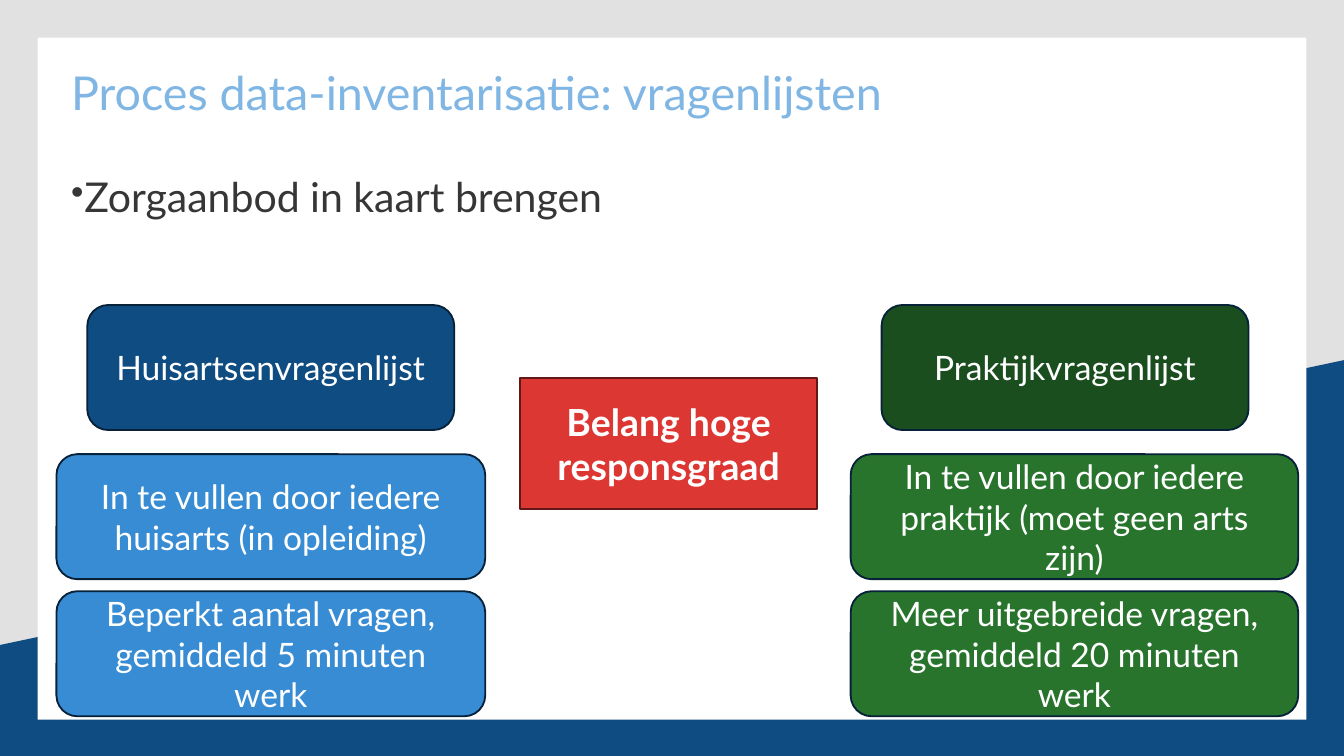
from lxml import etree
from pptx import Presentation
from pptx.dml.color import RGBColor
from pptx.enum.shapes import MSO_SHAPE
from pptx.enum.text import MSO_ANCHOR, PP_ALIGN
from pptx.oxml.ns import qn
from pptx.util import Inches, Pt

RECT, ROUND = MSO_SHAPE.RECTANGLE, MSO_SHAPE.ROUNDED_RECTANGLE
MIDDLE, CENTER = MSO_ANCHOR.MIDDLE, PP_ALIGN.CENTER

TITLE = "Proces data-inventarisatie: vragenlijsten"
POINT = "Zorgaanbod in kaart brengen"
CALL = "Belang hoge responsgraad"
LISTS = [
    {"head": "Huisartsenvragenlijst", "tone": ("navy", "blue"),
     "left": 0.42, "inset": 0.23, "width": 3.19,
     "facts": ["In te vullen door iedere huisarts (in opleiding)",
               "Beperkt aantal vragen, gemiddeld 5 minuten werk"]},
    {"head": "Praktijkvragenlijst", "tone": ("forest", "green"),
     "left": 6.33, "inset": 0.23, "width": 3.33,
     "facts": ["In te vullen door iedere praktijk (moet geen arts zijn)",
               "Meer uitgebreide vragen, gemiddeld 20 minuten werk"]},
]

THEME = {
    "font": "Lato",
    "size": {"title": 25, "point": 22, "call": 20, "card": 18},
    "color": {"back": "E1E1E1", "white": "FFFFFF", "ink": "373636",
              "sky": "80B6E4", "navy": "0F4C81", "blue": "378CD4",
              "forest": "1A4E1E", "green": "28742D", "edge": "072139",
              "red": "DD3734", "wine": "611817"},
}

WIDE, HIGH = 10, 5.625
EDGE = 0.28
HEAD_W, CARD_H = 2.73, 0.93
HEAD_Y, FACT_Y, STEP = 2.27, 3.38, 1.02


def rgb(name):
    return RGBColor.from_string(THEME["color"][name])


def style(para, size, color, bold=False):
    for run in para.runs:
        font = run.font
        font.name, font.size = THEME["font"], Pt(THEME["size"][size])
        font.bold, font.color.rgb = bold, rgb(color)


def paint(shape, fill, line=None):
    shape.shadow.inherit = False
    shape.fill.solid()
    shape.fill.fore_color.rgb = rgb(fill)
    if line:
        shape.line.color.rgb = rgb(line)
        shape.line.width = Pt(1)
    else:
        shape.line.fill.background()


def block(slide, kind, box, fill, line=None, text="", size="card", bold=False):
    shape = slide.shapes.add_shape(kind, *map(Inches, box))
    paint(shape, fill, line)
    if text:
        frame = shape.text_frame
        frame.text, frame.word_wrap = text, True
        frame.vertical_anchor = MIDDLE
        para = frame.paragraphs[0]
        para.alignment = CENTER
        style(para, size, "white", bold)


def label(slide, box, text, size, color, bullet=False):
    frame = slide.shapes.add_textbox(*map(Inches, box)).text_frame
    frame.text, frame.word_wrap = text, True
    frame.margin_left = frame.margin_right = 0
    frame.margin_top = frame.margin_bottom = 0
    para = frame.paragraphs[0]
    para.line_spacing = 0.9
    if bullet:
        props = para._p.get_or_add_pPr()
        etree.SubElement(props, qn("a:buSzPct")).set("val", "90000")
        etree.SubElement(props, qn("a:buChar")).set("char", "•")
    style(para, size, color)


def backdrop(slide):
    fill = slide.background.fill
    fill.solid()
    fill.fore_color.rgb = rgb("back")
    pen = slide.shapes.build_freeform(Inches(WIDE), Inches(2.68), scale=1.0)
    rest = [(WIDE, HIGH), (0, HIGH), (0, 4.8)]
    pen.add_line_segments([(Inches(x), Inches(y)) for x, y in rest])
    paint(pen.convert_to_shape(), "navy")
    block(slide, RECT, (EDGE, EDGE, WIDE - 2 * EDGE, HIGH - 2 * EDGE + 0.01),
          "white")


def column(slide, item):
    dark, light = item["tone"]
    left, width = item["left"], item["width"]
    block(slide, ROUND, (left + item["inset"], HEAD_Y, HEAD_W, CARD_H),
          dark, "edge", item["head"])
    for row, fact in enumerate(item["facts"]):
        block(slide, ROUND, (left, FACT_Y + row * STEP, width, CARD_H),
              light, "edge", fact)


def main():
    deck = Presentation()
    deck.slide_width, deck.slide_height = Inches(WIDE), Inches(HIGH)
    slide = deck.slides.add_slide(deck.slide_layouts[6])
    backdrop(slide)
    label(slide, (0.53, 1.32, 8.9, 0.7), POINT, "point", "ink", bullet=True)
    label(slide, (0.53, 0.52, 6.54, 0.7), TITLE, "title", "sky")
    for item in LISTS:
        column(slide, item)
    block(slide, RECT, (3.87, 2.81, 2.21, 0.98), "red", "wine", CALL, "call",
          bold=True)
    deck.save("out.pptx")


if __name__ == "__main__":
    main()
